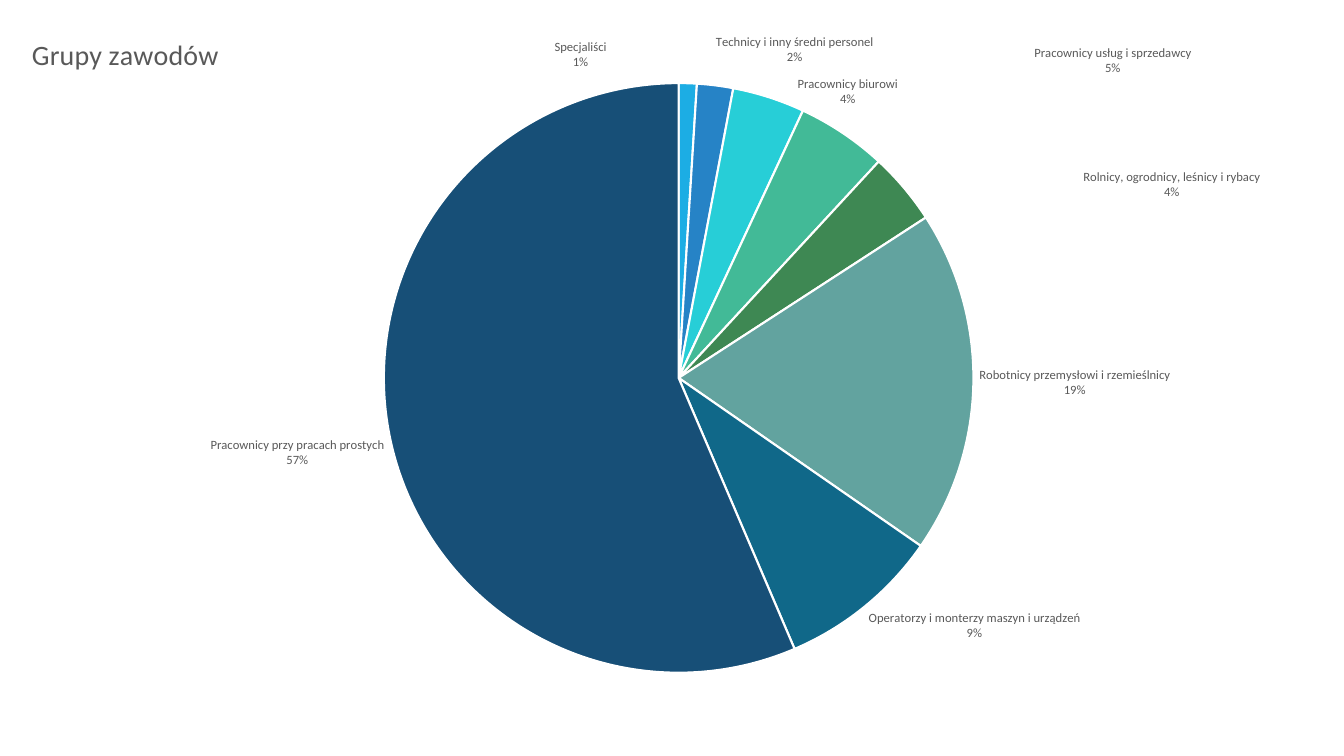
from copy import deepcopy

from pptx import Presentation
from pptx.chart.data import CategoryChartData
from pptx.dml.color import RGBColor
from pptx.enum.chart import XL_CHART_TYPE as ChartType, XL_LABEL_POSITION as LabelPosition
from pptx.oxml import parse_xml
from pptx.oxml.ns import nsdecls, qn
from pptx.util import Cm, Pt

FONT = "Calibri"
COLORS = {"text": "595959", "gap": "FFFFFF"}
# occupation group, share in percent, slice colour, label shift as a fraction of the chart
GROUPS = [
    ("Specjaliści", 1, "1CADE4", (-0.08, -0.01)),
    ("Technicy i inny średni personel", 2, "2683C6", (0, -0.02)),
    ("Pracownicy biurowi", 4, "27CED7", (0.02, 0.02)),
    ("Pracownicy usług i sprzedawcy", 5, "42BA97", (0.14, -0.07)),
    ("Rolnicy, ogrodnicy, leśnicy i rybacy", 4, "3E8853", (0.13, 0.02)),
    ("Robotnicy przemysłowi i rzemieślnicy", 19, "62A39F", None),
    ("Operatorzy i monterzy maszyn i urządzeń", 9, "106889", None),
    ("Pracownicy przy pracach prostych", 57, "174F77", None),
]


def color(name):
    return RGBColor.from_string(COLORS[name])


def style_font(font, size):
    font.name, font.size, font.bold = FONT, Pt(size), False
    font.color.rgb = color("text")


def manual_layout(**settings):
    """Build a c:layout element; the settings come in schema order."""
    parts = "".join(f'<c:{tag} val="{value}"/>' for tag, value in settings.items())
    return parse_xml(
        f'<c:layout {nsdecls("c")}><c:manualLayout>{parts}</c:manualLayout></c:layout>')


def set_title(chart):
    title_frame = chart.chart_title.text_frame
    title_frame.text = "Grupy zawodów"
    style_font(title_frame.paragraphs[0].runs[0].font, 20)
    title = chart.chart_title._element
    for layout in title.findall(qn("c:layout")):
        title.remove(layout)
    title.find(qn("c:tx")).addnext(
        manual_layout(xMode="edge", yMode="edge", x=0.02, y=0.04))


def place_pie(chart):
    plot_area = chart._chartSpace.chart.plotArea
    for layout in plot_area.findall(qn("c:layout")):
        plot_area.remove(layout)
    plot_area.insert(0, manual_layout(
        layoutTarget="inner", xMode="edge", yMode="edge",
        x=0.28, y=0.11, w=0.45, h=0.78))


def color_slices(shares):
    for index, (_, _, slice_color, _) in enumerate(GROUPS):
        slice_format = shares.points[index].format
        slice_format.fill.solid()
        slice_format.fill.fore_color.rgb = RGBColor.from_string(slice_color)
        slice_format.line.color.rgb = color("gap")
        slice_format.line.width = Pt(1.5)


def label_slices(shares):
    """Label every slice with its group and share, and shift the crowded labels."""
    labels = shares.data_labels
    style_font(labels.font, 9)
    labels.number_format = '0"%"'
    labels.number_format_is_linked = False
    labels.position = LabelPosition.OUTSIDE_END
    labels.show_category_name = labels.show_value = True
    labels.show_percentage = False

    label_xml = labels._element
    for leader in label_xml.findall(qn("c:showLeaderLines")):
        label_xml.remove(leader)
    label_xml.append(parse_xml(f'<c:separator {nsdecls("c")}>\n</c:separator>'))
    common = list(label_xml)
    label_xml.append(parse_xml(f'<c:showLeaderLines {nsdecls("c")} val="0"/>'))

    for index, (_, _, _, shift) in enumerate(GROUPS):
        if shift:
            label = parse_xml(f'<c:dLbl {nsdecls("c")}><c:idx val="{index}"/></c:dLbl>')
            label.append(manual_layout(x=shift[0], y=shift[1]))
            label.extend([deepcopy(part) for part in common])
            label_xml.insert(index, label)


def add_groups_chart(slide, left, top, width, height):
    data = CategoryChartData()
    data.categories = [group[0] for group in GROUPS]
    data.add_series("Series 1", [group[1] for group in GROUPS])
    chart = slide.shapes.add_chart(ChartType.PIE, left, top, width, height, data).chart
    style_font(chart.font, 10)
    chart.has_legend = False
    chart.plots[0].vary_by_categories = True
    set_title(chart)
    place_pie(chart)
    shares = chart.plots[0].series[0]
    color_slices(shares)
    label_slices(shares)


def main():
    deck = Presentation()
    deck.slide_width, deck.slide_height = Cm(33.87), Cm(19.05)
    blank_layout = deck.slide_layouts[6]
    slide = deck.slides.add_slide(blank_layout)
    add_groups_chart(slide, 0, 0, deck.slide_width, deck.slide_height)
    deck.save("out.pptx")


if __name__ == "__main__":
    main()
